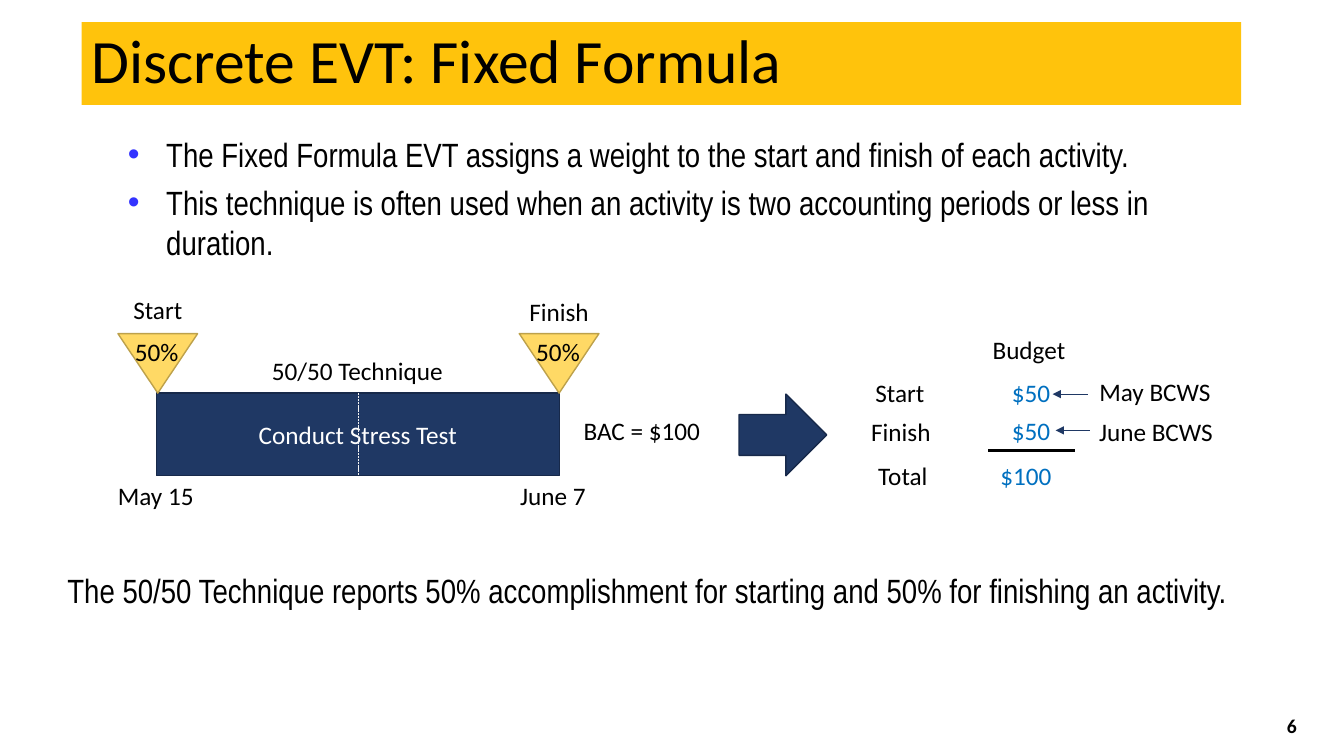
import pptx
import pptx.util
import pptx.dml.color
import pptx.enum.dml
import pptx.enum.shapes
import pptx.enum.text
import pptx.oxml
import pptx.oxml.ns
import pptx.oxml.xmlchemy
from pptx.util import Inches

SHAPE = pptx.enum.shapes.MSO_SHAPE
ALIGN = pptx.enum.text.PP_ALIGN
MIDDLE = pptx.enum.text.MSO_ANCHOR.MIDDLE
NAVY, NAVY_EDGE, BLACK, BLUE = "1F3864", "17294A", "000000", "0070C0"
YELLOW, YELLOW_EDGE = "FFD965", "BDA14B"


def color(hex_string):
    return pptx.dml.color.RGBColor.from_string(hex_string)


def write(paragraph, text, size=18, font="Calibri", ink=BLACK, align=ALIGN.LEFT):
    paragraph.alignment = align
    run = paragraph.add_run()
    run.text = text
    run.font.size = pptx.util.Pt(size)
    run.font.name = font
    run.font.color.rgb = color(ink)
    return run


deck = pptx.Presentation()
deck.slide_width, deck.slide_height = Inches(13.33), Inches(7.5)
slide = deck.slides.add_slide(deck.slide_layouts[6])
shapes = slide.shapes

blocks = []
for kind, left, top, width, height, fill, edge in [
    (SHAPE.RECTANGLE, 0.81, 0.22, 11.5, 0.82, "FFC30C", None),
    (SHAPE.RECTANGLE, 1.55, 3.9, 4, 0.82, NAVY, NAVY_EDGE),
    (SHAPE.ISOSCELES_TRIANGLE, 1.17, 3.31, 0.79, 0.59, YELLOW, YELLOW_EDGE),
    (SHAPE.ISOSCELES_TRIANGLE, 5.15, 3.31, 0.79, 0.59, YELLOW, YELLOW_EDGE),
    (SHAPE.RIGHT_ARROW, 7.33, 3.91, 0.87, 0.81, NAVY, NAVY_EDGE),
]:
    block = shapes.add_shape(kind, Inches(left), Inches(top), Inches(width), Inches(height))
    block.shadow.inherit = False
    block.fill.solid()
    block.fill.fore_color.rgb = color(fill)
    if edge:
        block.line.color.rgb = color(edge)
        block.line.width = pptx.util.Pt(1)
    else:
        block.line.fill.background()
    if kind == SHAPE.ISOSCELES_TRIANGLE:
        block.rotation = 180
    block.text_frame.vertical_anchor = MIDDLE
    blocks.append(block)

title, activity = blocks[:2]
title.text_frame.paragraphs[0].line_spacing = 0.9
write(title.text_frame.paragraphs[0], "Discrete EVT: Fixed Formula", 44)
write(activity.text_frame.paragraphs[0], "Conduct Stress Test", ink="FFFFFF", align=ALIGN.CENTER)

for left, top, width, height, indent, bullet, statements in [
    (1.17, 1.28, 10.51, 1.39, 0.38, True, [
        "The Fixed Formula EVT assigns a weight to the start and finish of each activity.",
        "This technique is often used when an activity is two accounting periods or less in duration.",
    ]),
    (0.57, 5.6, 12.19, 0.5, 0.25, False, [
        "The 50/50 Technique reports 50% accomplishment for starting and 50% for finishing an activity.",
    ]),
]:
    frame = shapes.add_textbox(Inches(left), Inches(top), Inches(width), Inches(height)).text_frame
    frame.word_wrap = True
    for index, statement in enumerate(statements):
        paragraph = frame.add_paragraph() if index else frame.paragraphs[0]
        write(paragraph, statement, 24, "Arial Narrow")
        paragraph.space_before = pptx.util.Pt(5.5)
        properties = paragraph._p.get_or_add_pPr()
        properties.set("marL", str(Inches(indent)))
        properties.set("indent", str(-Inches(indent)))
        if bullet:
            namespace = pptx.oxml.ns.nsdecls("a")
            for xml in (
                f'<a:buClr {namespace}><a:srgbClr val="3333FF"/></a:buClr>',
                f'<a:buFont {namespace} typeface="Arial"/>',
                f'<a:buChar {namespace} char="•"/>',
            ):
                properties.append(pptx.oxml.parse_xml(xml))

for text, left, top, width, ink, align in [
    ("Start", 1.07, 2.87, 0.99, BLACK, ALIGN.CENTER),
    ("Finish", 5.05, 2.89, 0.99, BLACK, ALIGN.CENTER),
    ("50%", 1.24, 3.29, 0.65, BLACK, ALIGN.LEFT),
    ("50%", 5.22, 3.29, 0.65, BLACK, ALIGN.LEFT),
    ("50/50 Technique", 2.53, 3.48, 2.03, BLACK, ALIGN.CENTER),
    ("May 15", 1.07, 4.72, 0.99, BLACK, ALIGN.LEFT),
    ("June 7", 5.06, 4.72, 0.99, BLACK, ALIGN.LEFT),
    ("BAC = $100", 5.69, 4.07, 1.37, BLACK, ALIGN.LEFT),
    ("Budget", 9.71, 3.27, 0.99, BLACK, ALIGN.CENTER),
    ("Start", 8.43, 3.69, 0.99, BLACK, ALIGN.CENTER),
    ("$50", 9.73, 3.69, 0.99, BLUE, ALIGN.CENTER),
    ("May BCWS", 10.79, 3.68, 1.33, BLACK, ALIGN.CENTER),
    ("Finish", 8.44, 4.08, 0.99, BLACK, ALIGN.CENTER),
    ("$50", 9.73, 4.07, 0.99, BLUE, ALIGN.CENTER),
    ("June BCWS", 10.72, 4.08, 1.49, BLACK, ALIGN.CENTER),
    ("Total", 8.46, 4.52, 0.99, BLACK, ALIGN.CENTER),
    ("$100", 9.68, 4.52, 0.99, BLUE, ALIGN.CENTER),
]:
    label = shapes.add_textbox(Inches(left), Inches(top), Inches(width), Inches(0.4))
    label.text_frame.word_wrap = True
    write(label.text_frame.paragraphs[0], text, ink=ink, align=align)

rules = []
for x1, y1, x2, y2, ink, weight, arrow in [
    (3.55, 3.9, 3.55, 4.72, "F2F2F2", 0.5, False),
    (9.8, 4.47, 10.66, 4.47, BLACK, 2.25, False),
    (10.79, 3.91, 10.44, 3.91, NAVY, 0.5, True),
    (10.81, 4.27, 10.47, 4.27, NAVY, 0.5, True),
]:
    rule = shapes.add_connector(
        pptx.enum.shapes.MSO_CONNECTOR.STRAIGHT, Inches(x1), Inches(y1), Inches(x2), Inches(y2))
    rule.line.color.rgb = color(ink)
    rule.line.width = pptx.util.Pt(weight)
    if arrow:
        head = pptx.oxml.xmlchemy.OxmlElement("a:tailEnd")
        head.set("type", "triangle")
        rule.get_or_add_ln().append(head)
    rule._element.spPr.append(pptx.oxml.xmlchemy.OxmlElement("a:effectLst"))
    rules.append(rule)

midpoint = rules[0]
midpoint.line.dash_style = pptx.enum.dml.MSO_LINE.SQUARE_DOT
midpoint.begin_connect(activity, 0)
midpoint.end_connect(activity, 2)

page_number = shapes.add_textbox(Inches(9.96), Inches(7), Inches(3), Inches(0.4)).text_frame
page_number.word_wrap = True
page_number.vertical_anchor = MIDDLE
write(page_number.paragraphs[0], "6", 14, align=ALIGN.RIGHT).font.bold = True

deck.save("out.pptx")
